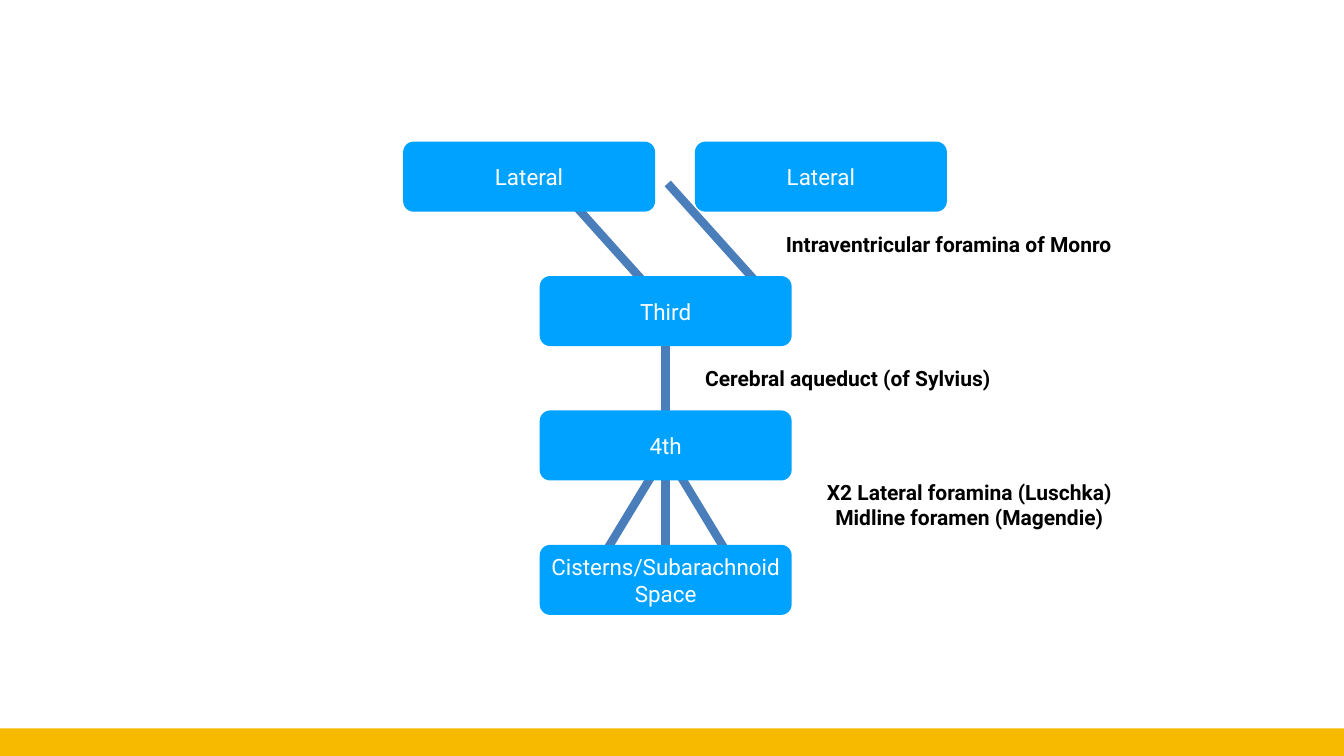
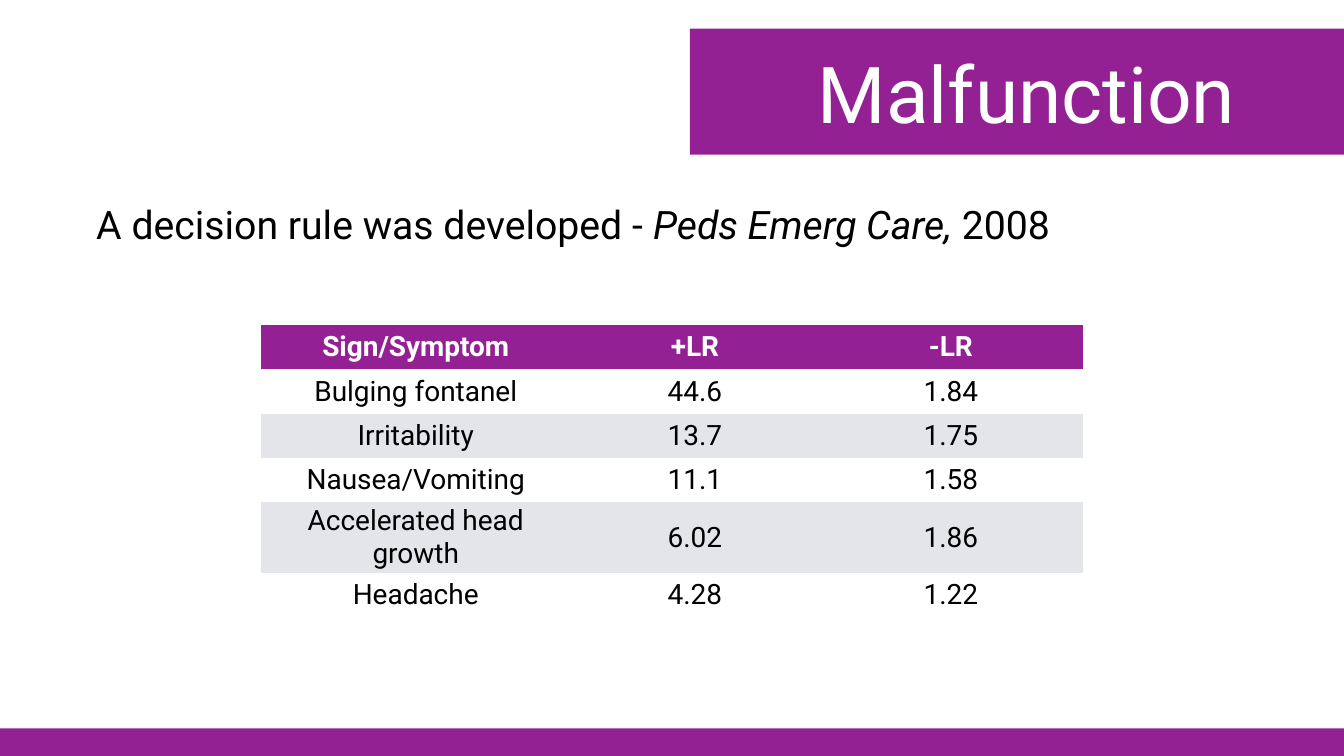
from lxml import etree
from pptx import Presentation
from pptx import util as u
from pptx.dml.color import RGBColor
from pptx.enum import shapes, text
from pptx.oxml.ns import qn

WIDTH, HEIGHT = 26.67, 15
FONT = "Roboto"
COLOURS = {
    "box": "00A2FF", "link": "4A7EBB", "gold": "F7BA01", "purple": "942193",
    "stripe": "E3E5E8", "white": "FFFFFF", "black": "000000",
}
PLAIN_TABLE = "{2D5ABB26-0587-4C30-8999-92F81FD0307C}"
BOX_W, BOX_H = 5, 1.39
FIRST_ROW, ROW_STEP = 2.81, 8 / 3
LEFT_COL, MID_COL, RIGHT_COL = 8, 10.71, 13.79
MID_AXIS = MID_COL + BOX_W / 2

BOXES = [
    ("Lateral", LEFT_COL, 0), ("Lateral", RIGHT_COL, 0), ("Third", MID_COL, 1),
    ("4th", MID_COL, 2), ("Cisterns/Subarachnoid Space", MID_COL, 3),
]
LINKS = [
    (13.25, 3.64, 15.64, 6.3), (13.4, 8.67, 11.41, 11.95),
    (11.02, 3.64, 13.41, 6.3), (12.85, 8.37, 14.84, 11.65),
]
PASSAGES = [
    (["Intraventricular foramina of Monro"], 15.35, 4.53, 6.95, 0.61),
    (["Cerebral aqueduct (of Sylvius)"], RIGHT_COL, 7.19, 6.07, 0.61),
    (["X2 Lateral foramina (Luschka)", "Midline foramen (Magendie)"],
     16.15, 9.45, 6.17, 1.13),
]
LIKELIHOOD_RATIOS = [
    ("Sign/Symptom", "+LR", "-LR"),
    ("Bulging fontanel", "44.6", "1.84"),
    ("Irritability", "13.7", "1.75"),
    ("Nausea/Vomiting", "11.1", "1.58"),
    ("Accelerated head growth", "6.02", "1.86"),
    ("Headache", "4.28", "1.22"),
]


def rgb(name):
    """Return the named colour."""
    return RGBColor.from_string(COLOURS[name])


def inches(*lengths):
    """Convert lengths in inches to slide units."""
    return [u.Inches(length) for length in lengths]


def row_top(row):
    """Return the top of a row of the ventricle diagram."""
    return FIRST_ROW + row * ROW_STEP


def assign(target, values):
    """Set every attribute listed in a dict."""
    for name, value in values.items():
        setattr(target, name, value)


def paint(shape, colour):
    """Fill a shape with one colour and remove its outline."""
    shape.fill.solid()
    shape.fill.fore_color.rgb = rgb(colour)
    shape.line.fill.background()


def inset(holder, margin, anchor=text.MSO_ANCHOR.MIDDLE):
    """Set equal margins and the anchor of a text frame or cell."""
    sides = ("left", "top", "right", "bottom")
    assign(holder, {f"margin_{side}": u.Inches(margin) for side in sides})
    holder.vertical_anchor = anchor


def write(paragraph, pieces, size, colour, bold=False, align=text.PP_ALIGN.CENTER):
    """Write (wording, italic) pieces into a paragraph."""
    paragraph.alignment = align
    for wording, italic in pieces:
        run = paragraph.add_run()
        run.text = wording
        assign(run.font, {"name": FONT, "size": u.Pt(size), "bold": bold, "italic": italic})
        run.font.color.rgb = rgb(colour)


def add_block(slide, kind, place, colour):
    """Add a flat preset shape."""
    block = slide.shapes.add_shape(kind, *inches(*place))
    block.shadow.inherit = False
    paint(block, colour)
    return block


def add_footer_band(slide, colour):
    """Add the coloured band along the foot of a slide."""
    add_block(slide, shapes.MSO_SHAPE.RECTANGLE, (-0.1, 14.45, WIDTH + 0.2, 0.6), colour)


def add_ventricle(slide, name, column, row):
    """Add a rounded box on the diagram grid."""
    box = add_block(slide, shapes.MSO_SHAPE.ROUNDED_RECTANGLE,
                    (column, row_top(row), BOX_W, BOX_H), "box")
    box.adjustments[0] = 0.15
    box.text_frame.word_wrap = True
    inset(box.text_frame, 0)
    write(box.text_frame.paragraphs[0], [(name, False)], 32, "white")
    return box


def add_link(slide, *ends):
    """Add a thick straight connector."""
    link = slide.shapes.add_connector(shapes.MSO_CONNECTOR.STRAIGHT, *inches(*ends))
    link.line.width = u.Pt(12)
    link.line.color.rgb = rgb("link")
    etree.SubElement(link.element.find(qn("p:spPr")), qn("a:effectLst"))
    return link


def add_passage(slide, lines, *place):
    """Add a bold label that names a passage."""
    frame = slide.shapes.add_textbox(*inches(*place)).text_frame
    assign(frame, {"word_wrap": False, "auto_size": text.MSO_AUTO_SIZE.SHAPE_TO_FIT_TEXT})
    inset(frame, 0.06)
    for index, line in enumerate(lines):
        paragraph = frame.add_paragraph() if index else frame.paragraphs[0]
        write(paragraph, [(line, False)], 30, "black", bold=True)


def place_placeholder(holder, place, anchor):
    """Move a placeholder and fix its text frame."""
    assign(holder, dict(zip(("left", "top", "width", "height"), inches(*place))))
    assign(holder.text_frame, {"word_wrap": True, "auto_size": text.MSO_AUTO_SIZE.NONE})
    inset(holder.text_frame, 0.06, anchor)
    return holder.text_frame.paragraphs[0]


def add_title(slide, wording, colour):
    """Turn the title placeholder into a coloured banner."""
    paragraph = place_placeholder(slide.shapes.title, (13.69, 0.57, 13.36, 2.5),
                                  text.MSO_ANCHOR.MIDDLE)
    paint(slide.shapes.title, colour)
    write(paragraph, [(wording, False)], 112, "white")


def add_statement(slide, pieces):
    """Write an unbulleted statement in the body placeholder."""
    paragraph = place_placeholder(slide.placeholders[1], (1.85, 3.91, 22.97, 9.7),
                                  text.MSO_ANCHOR.TOP)
    write(paragraph, pieces, 56, "black", align=text.PP_ALIGN.LEFT)
    paragraph.space_before = u.Pt(13)
    properties = paragraph.runs[0].font and paragraph.runs[0]._r.getparent().find(qn("a:pPr"))
    for name in ("marL", "indent"):
        properties.set(name, "0")
    etree.SubElement(properties, qn("a:buNone"))


def add_ratio_table(slide, rows, widths, left, top, row_height):
    """Add a striped table with a coloured header row."""
    frame = slide.shapes.add_table(len(rows), len(widths), *inches(
        left, top, sum(widths), row_height * len(rows)))
    next(frame.element.iter(qn("a:tableStyleId"))).text = PLAIN_TABLE
    table = frame.table
    for column, width in zip(table.columns, widths):
        column.width = u.Inches(width)
    for r, values in enumerate(rows):
        header = r == 0
        fill = "purple" if header else ("white", "stripe")[(r - 1) % 2]
        for c, value in enumerate(values):
            cell = table.cell(r, c)
            inset(cell, 0.05)
            cell.fill.solid()
            cell.fill.fore_color.rgb = rgb(fill)
            write(cell.text_frame.paragraphs[0], [(value, False)], 40,
                  "white" if header else "black", bold=header)


def build_ventricles(deck):
    """Build the ventricle flow slide."""
    slide = deck.slides.add_slide(deck.slide_layouts[6])
    for ends in LINKS:
        add_link(slide, *ends)
    midline = add_link(slide, MID_AXIS, 6.26, MID_AXIS, row_top(3))
    for passage in PASSAGES:
        add_passage(slide, *passage)
    boxes = [add_ventricle(slide, *box) for box in BOXES]
    midline.end_connect(boxes[-1], 0)
    add_footer_band(slide, "gold")


def build_malfunction(deck):
    """Build the decision rule slide."""
    slide = deck.slides.add_slide(deck.slide_layouts[1])
    add_statement(slide, [("A decision rule was developed - ", False),
                          ("Peds Emerg Care, ", True), ("2008", False)])
    add_footer_band(slide, "purple")
    add_title(slide, "Malfunction", "purple")
    add_ratio_table(slide, LIKELIHOOD_RATIOS, (6.16, 4.92, 5.24), 5.17, 6.45, 0.88)


def main():
    """Build and save the deck."""
    deck = Presentation()
    deck.slide_width, deck.slide_height = inches(WIDTH, HEIGHT)
    build_ventricles(deck)
    build_malfunction(deck)
    deck.save("out.pptx")


if __name__ == "__main__":
    main()
